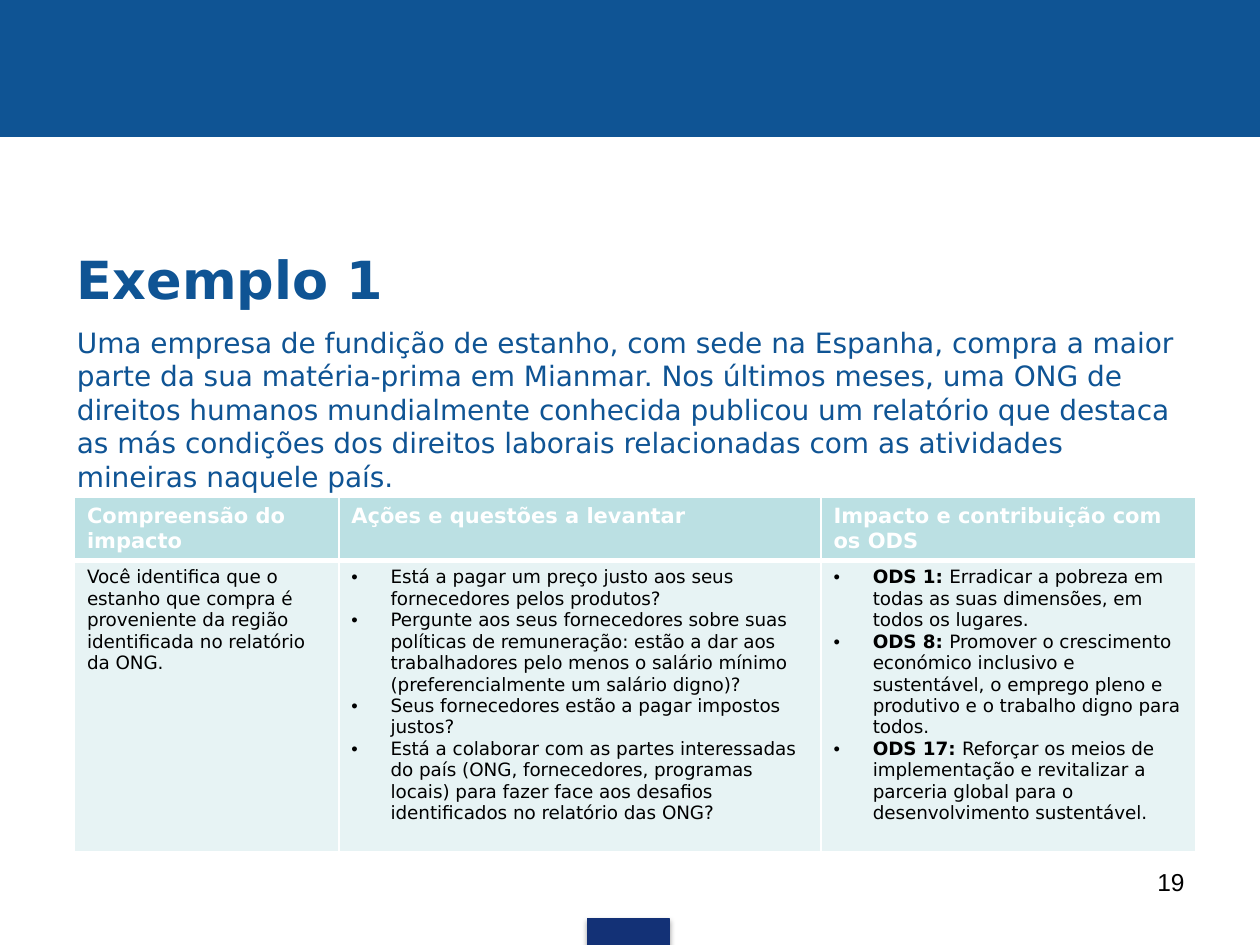
from lxml import etree
from pptx import Presentation
from pptx.dml.color import RGBColor
from pptx.enum.shapes import MSO_SHAPE as Shape
from pptx.enum.text import MSO_ANCHOR as Anchor, PP_ALIGN as Align
from pptx.oxml import parse_xml
from pptx.oxml.ns import nsdecls, qn
from pptx.util import Cm, Pt

BLUE, NAVY, WHITE, BLACK = "0F5494", "133176", "FFFFFF", "000000"
HEADER_FILL, BODY_FILL = "BBE0E3", "E7F3F4"
SANS = "DejaVu Sans"


def color(value):
    return RGBColor.from_string(value)


def format_run(run, size, value, bold=False, name=SANS):
    run.font.size = Pt(size)
    run.font.name = name
    run.font.bold = bold
    run.font.color.rgb = color(value)


presentation = Presentation()
presentation.slide_width, presentation.slide_height = Cm(25.4), Cm(19.05)
slide = presentation.slides.add_slide(presentation.slide_layouts[6])

# Top band and bottom tab
bars = [(0, 0, 25.4, 2.75, BLUE), (11.84, 18.51, 1.65, 0.55, NAVY)]
for left, top, width, height, fill in bars:
    bar = slide.shapes.add_shape(Shape.RECTANGLE, Cm(left), Cm(top), Cm(width), Cm(height))
    bar.shadow.inherit = False
    bar.fill.solid()
    bar.fill.fore_color.rgb = color(fill)
    bar.line.color.rgb = color(fill)
    bar.line.width = Pt(0.75)

# Soft shadow under the bottom tab
effects = bar._element.spPr.find(qn("a:effectLst"))
effects.append(parse_xml(
    f'<a:outerShdw {nsdecls("a")} blurRad="{Pt(3.1)}" dist="{Pt(1.8)}" dir="5400000" rotWithShape="0">'
    '<a:srgbClr val="000000"><a:alpha val="35000"/></a:srgbClr></a:outerShdw>'))

# Title, introduction and page number
introduction = (
    "Uma empresa de fundição de estanho, com sede na Espanha, compra a maior parte da sua "
    "matéria-prima em Mianmar. Nos últimos meses, uma ONG de direitos humanos mundialmente "
    "conhecida publicou um relatório que destaca as más condições dos direitos laborais "
    "relacionadas com as atividades mineiras naquele país.")
texts = [
    ("Exemplo 1", 1.3, 4.32, 22.86, 2.59, Anchor.MIDDLE, Align.LEFT, 30, BLUE, True, SANS),
    (introduction, 1.3, 6.43, 22.86, 3.61, Anchor.TOP, Align.LEFT, 16, BLUE, False, SANS),
    ("19", 18.21, 17.35, 5.92, 1.32, Anchor.TOP, Align.RIGHT, 14, BLACK, False, "Arial"),
]
for text, left, top, width, height, anchor, align, size, value, bold, name in texts:
    box = slide.shapes.add_textbox(Cm(left), Cm(top), Cm(width), Cm(height))
    box.text_frame.word_wrap = True
    box.text_frame.vertical_anchor = anchor
    box.text_frame.text = text
    paragraph = box.text_frame.paragraphs[0]
    paragraph.alignment = align
    format_run(paragraph.runs[0], size, value, bold, name)

# Table content: each paragraph is a bold lead and a plain rest
headers = ["Compreensão do impacto", "Ações e questões a levantar",
           "Impacto e contribuição com os ODS"]
understanding = [
    ("", "Você identifica que o estanho que compra é proveniente da região identificada "
         "no relatório da ONG."),
]
actions = [
    ("", "Está a pagar um preço justo aos seus fornecedores pelos produtos?"),
    ("", "Pergunte aos seus fornecedores sobre suas políticas de remuneração: estão a dar aos "
         "trabalhadores pelo menos o salário mínimo (preferencialmente um salário digno)?"),
    ("", "Seus fornecedores estão a pagar impostos justos?"),
    ("", "Está a colaborar com as partes interessadas do país (ONG, fornecedores, programas "
         "locais) para fazer face aos desafios identificados no relatório das ONG?"),
]
goals = [
    ("ODS 1: ", "Erradicar a pobreza em todas as suas dimensões, em todos os lugares."),
    ("ODS 8: ", "Promover o crescimento económico inclusivo e sustentável, o emprego pleno e "
                "produtivo e o trabalho digno para todos."),
    ("ODS 17: ", "Reforçar os meios de implementação e revitalizar a parceria global para o "
                 "desenvolvimento sustentável."),
]
rows = [
    ([[(header, "")] for header in headers], 1.24, HEADER_FILL, 12, WHITE, 3),
    ([understanding, actions, goals], 5.87, BODY_FILL, 10.5, BLACK, 1),
]

# Table
table = slide.shapes.add_table(2, 3, Cm(1.5), Cm(10.03), Cm(22.6), Cm(7.11)).table
for column, width in zip(table.columns, (5.33, 9.72, 7.55)):
    column.width = Cm(width)
for row, (contents, height, fill, size, value, bottom) in zip(table.rows, rows):
    row.height = Cm(height)
    for cell, items in zip(row.cells, contents):
        cell.fill.solid()
        cell.fill.fore_color.rgb = color(fill)
        for index, (side, weight) in enumerate(zip("LRTB", (1, 1, 1, bottom))):
            cell._tc.get_or_add_tcPr().insert(index, parse_xml(
                f'<a:ln{side} {nsdecls("a")} w="{Pt(weight)}"><a:solidFill>'
                f'<a:srgbClr val="{WHITE}"/></a:solidFill></a:ln{side}>'))
        for index, parts in enumerate(items):
            frame = cell.text_frame
            paragraph = frame.add_paragraph() if index else frame.paragraphs[0]
            if len(items) > 1:
                properties = paragraph._p.get_or_add_pPr()
                properties.set("marL", str(Cm(0.79)))
                properties.set("indent", str(-Cm(0.79)))
                etree.SubElement(properties, qn("a:buFont"), typeface="Arial")
                etree.SubElement(properties, qn("a:buChar"), char="•")
            for text, bold in zip(parts, (True, False)):
                if text:
                    run = paragraph.add_run()
                    run.text = text
                    format_run(run, size, value, bold)

presentation.save("out.pptx")
